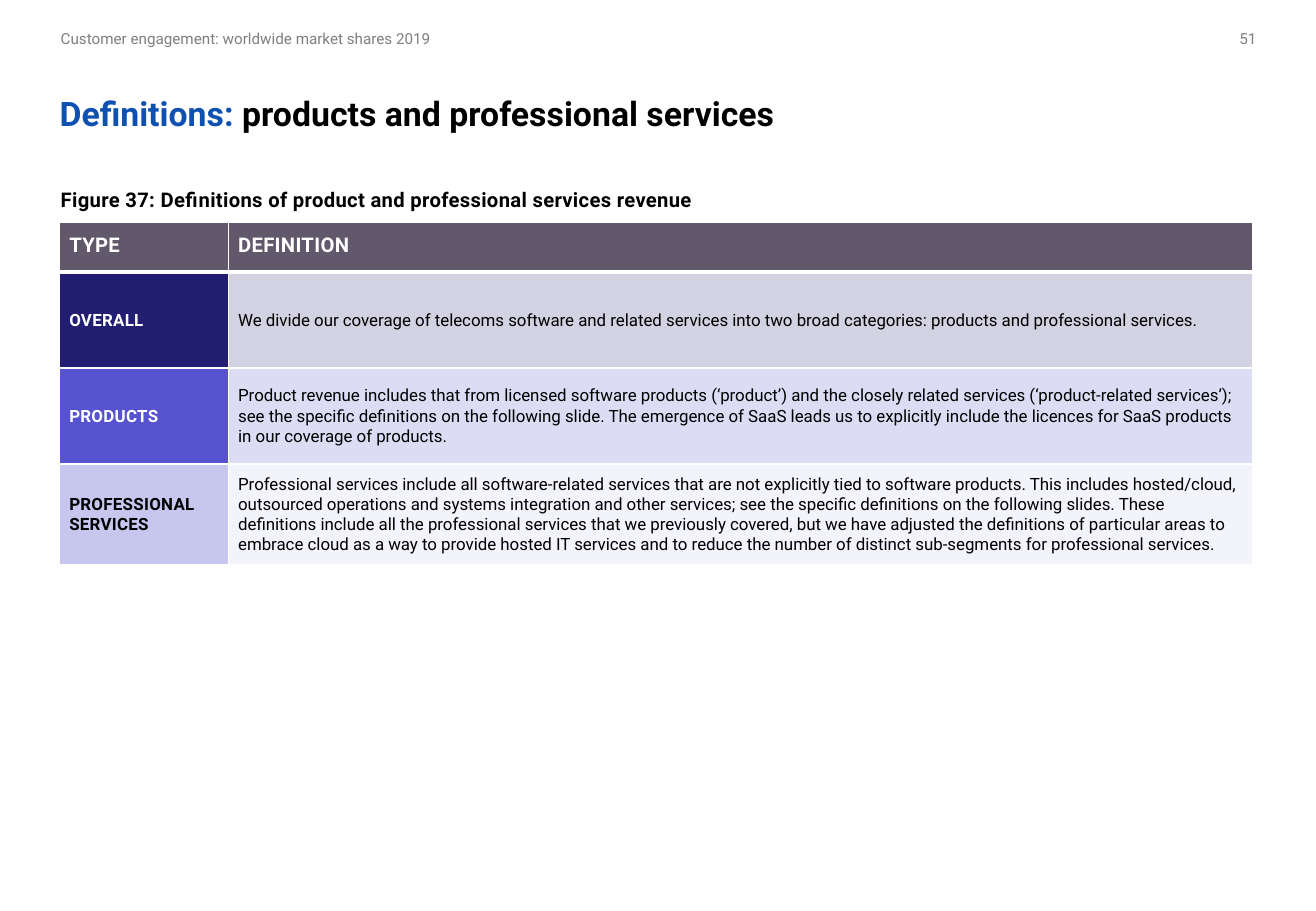
from lxml.etree import SubElement
from pptx import Presentation
from pptx.dml.color import RGBColor
from pptx.enum.text import MSO_ANCHOR as Anchor, PP_ALIGN as Align
from pptx.oxml import parse_xml
from pptx.oxml.ns import nsdecls, qn
from pptx.util import Inches, Pt

FONT = "Roboto"
BLACK = RGBColor(0x00, 0x00, 0x00)
WHITE = RGBColor(0xFF, 0xFF, 0xFF)
GREY = RGBColor(0x7F, 0x7F, 0x7F)
BLUE = RGBColor(0x0F, 0x51, 0xB1)
HEADER_FILL = RGBColor(0x61, 0x58, 0x6C)
NAVY = RGBColor(0x22, 0x1F, 0x72)
VIOLET = RGBColor(0x57, 0x53, 0xD0)
LILAC = RGBColor(0xC7, 0xC6, 0xEF)

COLUMN_WIDTHS = (1.39, 8.43)
ROW_HEIGHTS = (0.41, 0.79, 0.79, 0.83)
DEFINITIONS = [
    ("OVERALL", NAVY, WHITE,
     "We divide our coverage of telecoms software and related services into two broad "
     "categories: products and professional services."),
    ("PRODUCTS", VIOLET, WHITE,
     "Product revenue includes that from licensed software products (‘product’) and the "
     "closely related services (‘product-related services’); see the specific definitions "
     "on the following slide. The emergence of SaaS leads us to explicitly include the "
     "licences for SaaS products in our coverage of products."),
    ("PROFESSIONAL SERVICES", LILAC, BLACK,
     "Professional services include all software-related services that are not explicitly "
     "tied to software products. This includes hosted/cloud, outsourced operations and "
     "systems integration and other services; see the specific definitions on the following "
     "slides. These definitions include all the professional services that we previously "
     "covered, but we have adjusted the definitions of particular areas to embrace cloud as "
     "a way to provide hosted IT services and to reduce the number of distinct sub-segments "
     "for professional services."),
]


def format_run(span, size, color, bold=False, spacing=0):
    """Style a run; spacing is the letter spacing in points."""
    span.font.name = FONT
    span.font.size = Pt(size)
    span.font.bold = bold
    span.font.color.rgb = color
    if spacing:
        span.font._element.set("spc", str(round(spacing * 100)))


def set_frame(frame, anchor):
    frame.word_wrap = True
    frame.vertical_anchor = anchor
    frame.margin_left = frame.margin_right = 0
    frame.margin_top = frame.margin_bottom = Inches(0.05)


def add_label(page, text, left, top, width, height, size, color,
              bold=False, spacing=0, anchor=Anchor.MIDDLE, align=Align.LEFT):
    box = page.shapes.add_textbox(Inches(left), Inches(top), Inches(width), Inches(height))
    set_frame(box.text_frame, anchor)
    para = box.text_frame.paragraphs[0]
    para.text = text
    para.alignment = align
    format_run(para.runs[0], size, color, bold, spacing)


def set_title(page, lead, rest):
    title = page.shapes.title
    title.left, title.top = Inches(0.49), Inches(0.51)
    title.width, title.height = Inches(9.84), Inches(0.83)
    set_frame(title.text_frame, Anchor.MIDDLE)
    para = title.text_frame.paragraphs[0]
    para.alignment = Align.LEFT
    para.line_spacing = Pt(25)
    for text, color in ((lead, BLUE), (rest, BLACK)):
        span = para.add_run()
        span.text = text
        format_run(span, 20, color, bold=True)


def set_borders(cell, top=1, bottom=1):
    """Draw white borders; top and bottom are widths in points."""
    properties = cell._tc.get_or_add_tcPr()
    widths = (("lnL", 1), ("lnR", 1), ("lnT", top), ("lnB", bottom))
    for index, (side, width) in enumerate(widths):
        properties.insert(index, parse_xml(
            f'<a:{side} {nsdecls("a")} w="{Pt(width)}"><a:solidFill>'
            f'<a:srgbClr val="{WHITE}"/></a:solidFill></a:{side}>'))


def fill_cell(cell, text, fill, color, size, bold=True, opacity=100):
    cell.fill.solid()
    cell.fill.fore_color.rgb = fill
    if opacity < 100:
        for fill_color in cell._tc.tcPr.iter(qn("a:srgbClr")):
            SubElement(fill_color, qn("a:alpha"), val=str(opacity * 1000))
    cell.vertical_anchor = Anchor.MIDDLE
    cell.margin_left = cell.margin_right = Inches(0.08)
    cell.margin_top = cell.margin_bottom = Inches(0.08)
    para = cell.text_frame.paragraphs[0]
    para.text = text
    para.line_spacing = Pt(12)
    para.space_after = Pt(2)
    format_run(para.runs[0], size, color, bold, 0.2 if bold else 0)


def add_definition_table(page):
    table = page.shapes.add_table(
        len(ROW_HEIGHTS), len(COLUMN_WIDTHS), Inches(0.49), Inches(1.83),
        Inches(sum(COLUMN_WIDTHS)), Inches(sum(ROW_HEIGHTS))).table
    for column, width in zip(table.columns, COLUMN_WIDTHS):
        column.width = Inches(width)
    for row, height in zip(table.rows, ROW_HEIGHTS):
        row.height = Inches(height)

    for column, heading in enumerate(("TYPE", "DEFINITION")):
        cell = table.cell(0, column)
        fill_cell(cell, heading, HEADER_FILL, WHITE, 12)
        set_borders(cell, bottom=3)
    for row, (name, fill, color, definition) in enumerate(DEFINITIONS, start=1):
        name_cell, definition_cell = table.cell(row, 0), table.cell(row, 1)
        fill_cell(name_cell, name, fill, color, 10)
        fill_cell(definition_cell, definition, fill, BLACK, 10, bold=False, opacity=20)
        for cell in (name_cell, definition_cell):
            set_borders(cell, top=3 if row == 1 else 1)


def main():
    deck = Presentation()
    deck.slide_width, deck.slide_height = Inches(10.83), Inches(7.5)
    page = deck.slides.add_slide(deck.slide_layouts[5])
    add_label(page, "Customer engagement: worldwide market shares 2019",
              0.5, 0.16, 3.23, 0.31, 9, GREY)
    add_label(page, "51", 9.59, 0.16, 0.75, 0.31, 9, GREY, align=Align.RIGHT)
    set_title(page, "Definitions: ", "products and professional services")
    add_label(page, "Figure 37: Definitions of product and professional services revenue",
              0.5, 1.49, 9.84, 0.28, 12, BLACK, bold=True, spacing=0.2, anchor=Anchor.TOP)
    add_definition_table(page)
    deck.save("out.pptx")


if __name__ == "__main__":
    main()
